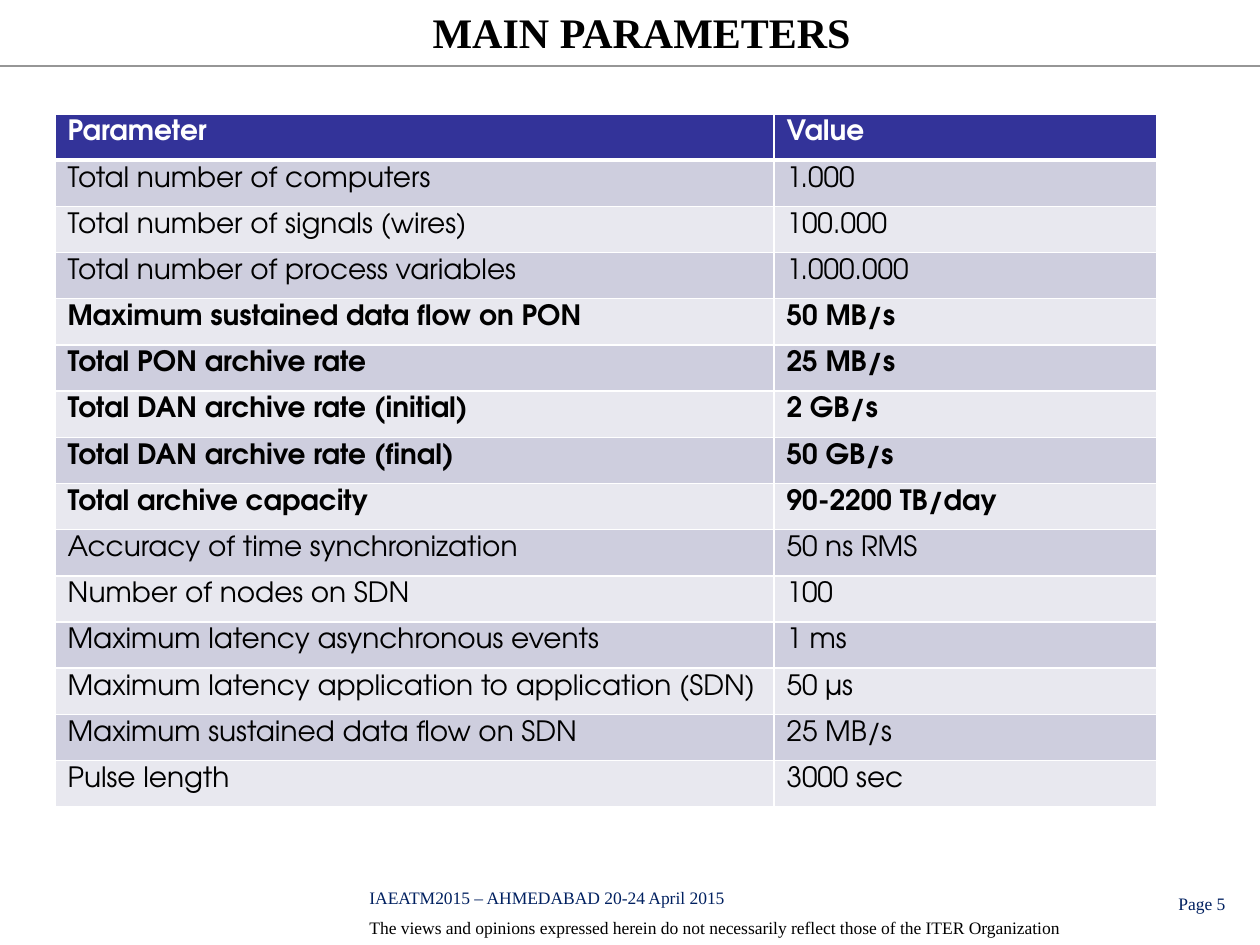
import pptx
import pptx.dml.color
import pptx.enum.shapes
import pptx.enum.text
import pptx.oxml
import pptx.oxml.ns
import pptx.util

PX = 914400 / 126
COLORS = {"white": "FFFFFF", "black": "000000", "navy": "002060",
          "rule": "969696", "header": "333399", "dark_band": "CECEDE",
          "light_band": "E8E8EF"}
SERIF = "Times New Roman"
SANS = "TeX Gyre Adventor"

PARAMETERS = [
    ("Parameter", "Value"),
    ("Total number of computers", "1.000"),
    ("Total number of signals (wires)", "100.000"),
    ("Total number of process variables", "1.000.000"),
    ("Maximum sustained data flow on PON", "50 MB/s"),
    ("Total PON archive rate", "25 MB/s"),
    ("Total DAN archive rate (initial)", "2 GB/s"),
    ("Total DAN archive rate (final)", "50 GB/s"),
    ("Total archive capacity", "90-2200 TB/day"),
    ("Accuracy of time synchronization", "50 ns RMS"),
    ("Number of nodes on SDN", "100"),
    ("Maximum latency asynchronous events", "1 ms"),
    ("Maximum latency application to application (SDN)", "50 µs"),
    ("Maximum sustained data flow on SDN", "25 MB/s"),
    ("Pulse length", "3000 sec"),
]
BOLD_ROWS = {0, 4, 5, 6, 7, 8}


def px(length):
    return pptx.util.Emu(round(length * PX))


def rgb(name):
    return pptx.dml.color.RGBColor.from_string(COLORS[name])


def add_span(para, text, size, font, color, bold=False):
    span = para.add_run()
    span.text = text
    span.font.size = pptx.util.Pt(size)
    span.font.name = font
    span.font.bold = bold
    span.font.color.rgb = rgb(color)


def add_text_box(page, box, lines):
    frame = page.shapes.add_textbox(*map(px, box)).text_frame
    frame.word_wrap = True
    for index, (text, color) in enumerate(lines):
        para = frame.add_paragraph() if index else frame.paragraphs[0]
        if index:
            para.space_before = pptx.util.Pt(5)
        add_span(para, text, 10, SERIF, color)


def set_borders(cell, widths):
    """Draw white borders; widths holds points for each side."""
    properties = cell._tc.get_or_add_tcPr()
    for index, side in enumerate("LRTB"):
        border = pptx.oxml.parse_xml(
            f'<a:ln{side} {pptx.oxml.ns.nsdecls("a")} w="{pptx.util.Pt(widths[side])}">'
            f'<a:solidFill><a:srgbClr val="{COLORS["white"]}"/></a:solidFill></a:ln{side}>')
        properties.insert(index, border)


def build_heading(page, box, rule_y, page_width):
    # Rule under the heading
    rule = page.shapes.add_connector(
        pptx.enum.shapes.MSO_CONNECTOR.STRAIGHT, 0, px(rule_y), px(page_width), px(rule_y))
    rule.line.color.rgb = rgb("rule")
    rule.line.width = pptx.util.Pt(1.25)
    rule._element.spPr.append(
        pptx.oxml.parse_xml(f'<a:effectLst {pptx.oxml.ns.nsdecls("a")}/>'))

    # Title
    title = page.shapes.title
    title.left, title.top, title.width, title.height = map(px, box)
    frame = title.text_frame
    frame.auto_size = pptx.enum.text.MSO_AUTO_SIZE.NONE
    frame.vertical_anchor = pptx.enum.text.MSO_ANCHOR.TOP
    para = frame.paragraphs[0]
    para.alignment = pptx.enum.text.PP_ALIGN.LEFT
    add_span(para, "MAIN PARAMETERS", 24, SERIF, "black", bold=True)


def build_table(page, box, name_width):
    left, top, width, height = box
    table = page.shapes.add_table(len(PARAMETERS), 2, *map(px, box)).table
    table.horz_banding = False
    table.columns[0].width = px(name_width)
    table.columns[1].width = px(width - name_width)
    for row_index, values in enumerate(PARAMETERS):
        table.rows[row_index].height = px(height / len(PARAMETERS))
        is_header = row_index == 0
        fill = "header" if is_header else ("light_band", "dark_band")[row_index % 2]
        widths = {"L": 1, "R": 1, "T": 3 if row_index == 1 else 1, "B": 3 if is_header else 1}
        for column_index, value in enumerate(values):
            cell = table.cell(row_index, column_index)
            cell.fill.solid()
            cell.fill.fore_color.rgb = rgb(fill)
            set_borders(cell, widths)
            add_span(cell.text_frame.paragraphs[0], value, 16, SANS,
                     "white" if is_header else "black", row_index in BOLD_ROWS)


def build_footer(page, box):
    left, top, width, height = box
    add_text_box(page, (left, top, 788, height), [
        ("IAEATM2015 – AHMEDABAD 20-24 April 2015", "navy"),
        ("The views and opinions expressed herein do not necessarily reflect "
         "those of the ITER Organization", "black")])
    add_text_box(page, (left + width - 81, top + 6, 81, 34), [("Page 5", "navy")])


def main():
    deck = pptx.Presentation()
    deck.slide_width, deck.slide_height = px(1260), px(945)
    page = deck.slides.add_slide(deck.slide_layouts.get_by_name("Title Only"))
    build_heading(page, (420, 0, 466, 63), 66, 1260)
    build_table(page, (55, 114, 1102, 693), 719)
    build_footer(page, (357, 881, 890, 64))
    deck.save("out.pptx")


if __name__ == "__main__":
    main()
